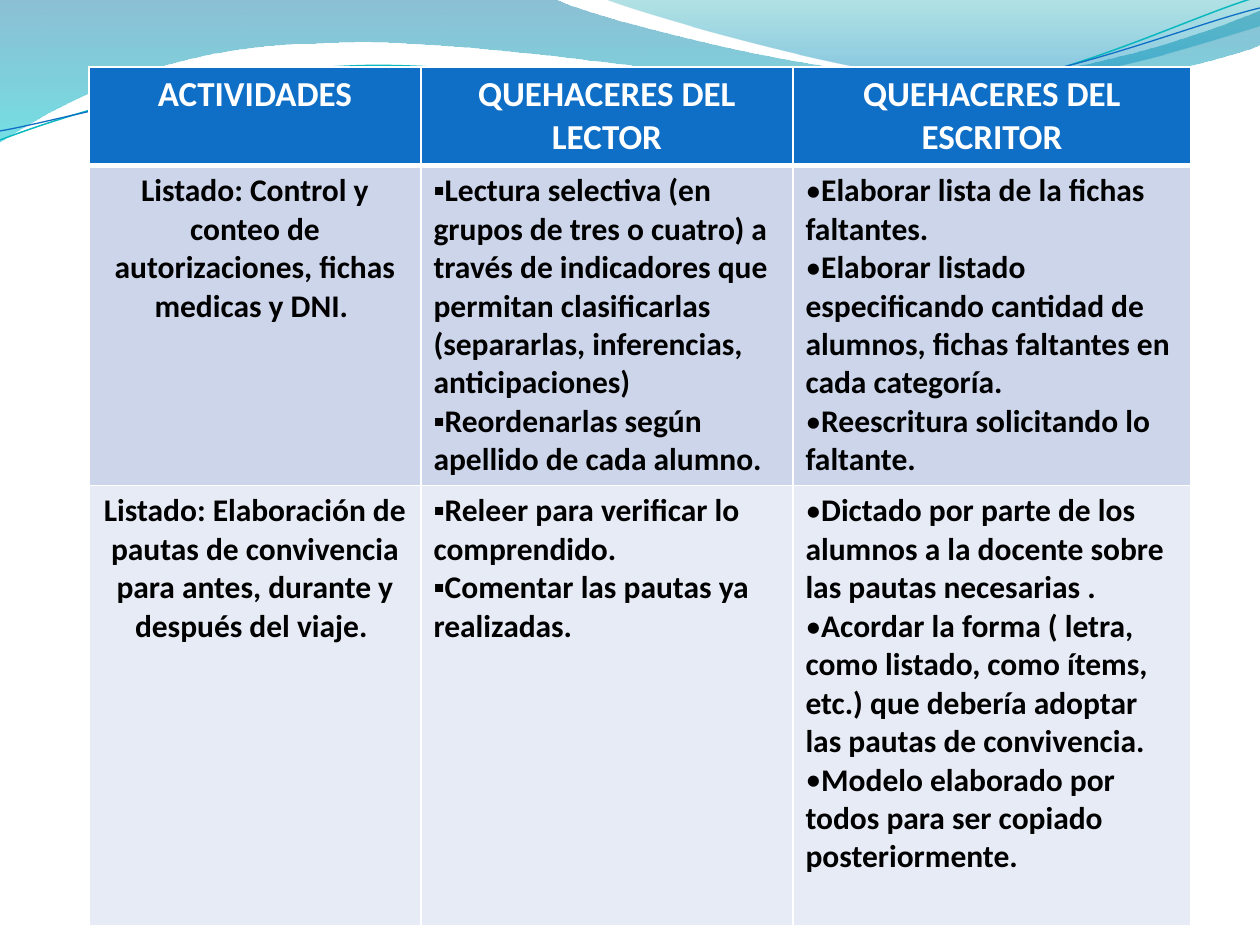
from lxml.etree import SubElement
from pptx import Presentation
from pptx.dml.color import RGBColor
from pptx.enum.text import PP_ALIGN
from pptx.oxml.ns import qn
from pptx.util import Pt

PX = 914400 / 126


def px(value):
    return round(value * PX)


def add_outline(slide, start, segments, closed):
    """Draw a path; a segment is an end point or two control points and an end point."""
    anchors = [start] + [segment[-1] for segment in segments]
    left = min(x for x, y in anchors)
    top = min(y for x, y in anchors)
    builder = slide.shapes.build_freeform(*start, scale=PX)
    builder.add_line_segments(anchors[1:], close=closed)
    shape = builder.convert_to_shape()
    shape.shadow.inherit = False
    for line, segment in zip(list(shape._element.iter(qn("a:lnTo"))), segments):
        if len(segment) == 3:
            curve = SubElement(line.getparent(), qn("a:cubicBezTo"))
            for x, y in segment:
                SubElement(curve, qn("a:pt"), x=str(x - left), y=str(y - top))
            line.getparent().replace(line, curve)
    return shape


deck = Presentation()
deck.slide_width, deck.slide_height = px(1260), px(945)
slide = deck.slides.add_slide(deck.slide_layouts[6])

# Translucent waves: start, segments, gradient stops (position, colour, opacity %)
waves = [
    ((0, -1),
     [[(554, -1)],
      [(600, 21), (837, 79), (955, 79)],
      [(1075, 79), (1207, 47), (1260, 11)],
      [(1261, 45)],
      [(1239, 55), (1096, 96), (940, 94)],
      [(783, 94), (481, 35), (324, 43)],
      [(163, 44), (58, 105), (-1, 142)]],
     [(0, "0074A1", 45), (1, "00C6CF", 55)]),
    ((604, -1),
     [[(641, 14), (859, 78), (969, 82)],
      [(1079, 87), (1211, 40), (1260, 26)],
      [(1260, 0)]],
     [(0, "00A1A9", 30), (0.8, "008BBF", 45)]),
]
# The first wave's upper edge rises to the right slightly below the second one
waves[0][1][2][1] = (1207, 33)
for start, segments, stops in waves:
    wave = add_outline(slide, start, segments, True)
    wave.line.fill.background()
    wave.fill.gradient()
    wave.fill.gradient_angle = 270
    for stop, (position, color, opacity) in zip(wave.fill.gradient_stops, stops):
        stop.position = position
        stop.color.rgb = RGBColor.from_string(color)
    for element, (_, _, opacity) in zip(wave._element.iter(qn("a:gs")), stops):
        SubElement(element[0], qn("a:alpha"), val=str(opacity * 1000))

strands = [
    ((0, 140),
     [[(60, 117), (199, 72), (349, 66)],
      [(498, 59), (747, 112), (898, 101)],
      [(1050, 89), (1182, 19), (1257, -3)]],
     "0AB8BF", 0.85),
    ((0, 131),
     [[(59, 121), (207, 77), (357, 71)],
      [(508, 64), (752, 105), (903, 95)],
      [(1053, 84), (1185, 26), (1260, 8)]],
     "0F6FC6", 0.75),
]
for start, segments, color, width in strands:
    strand = add_outline(slide, start, segments, False)
    strand.fill.background()
    strand.line.color.rgb = RGBColor.from_string(color)
    strand.line.width = Pt(width)

# Activities table
rows = [
    [["ACTIVIDADES"], ["QUEHACERES DEL LECTOR"], ["QUEHACERES DEL ESCRITOR"]],
    [["Listado: Control y conteo de autorizaciones, fichas medicas y DNI. "],
     ["Lectura selectiva (en grupos de tres o cuatro) a través de indicadores que "
      "permitan clasificarlas (separarlas, inferencias, anticipaciones)",
      "Reordenarlas según apellido de cada alumno."],
     ["Elaborar lista de la fichas faltantes.",
      "Elaborar listado especificando cantidad de alumnos, fichas faltantes en "
      "cada categoría.",
      "Reescritura solicitando lo faltante."]],
    [["Listado: Elaboración de pautas de convivencia para antes, durante y "
      "después del viaje. "],
     ["Releer para verificar lo comprendido.",
      "Comentar las pautas ya realizadas."],
     ["Dictado por parte de los alumnos a la docente sobre las pautas necesarias .",
      "Acordar la forma ( letra, como listado, como ítems, etc.) que debería "
      "adoptar las pautas de convivencia.",
      "Modelo elaborado por todos para ser copiado posteriormente."]],
]
column_widths = [332, 372, 398]
row_heights = [91, 297, 440]
row_fills = ["0F6FC6", "CCD5EA", "E7EBF5"]
bullets = [None, "▪", "•"]

table = slide.shapes.add_table(3, 3, px(89), px(67), px(sum(column_widths)),
                               px(sum(row_heights))).table
for column, width in zip(table.columns, column_widths):
    column.width = px(width)
for row, height in zip(table.rows, row_heights):
    row.height = px(height)

for row_index, texts in enumerate(rows):
    header = row_index == 0
    for column_index, paragraphs in enumerate(texts):
        cell = table.cell(row_index, column_index)
        properties = cell._tc.get_or_add_tcPr()
        thick_side = {0: "B", 1: "T"}.get(row_index)
        for side in "LRTB":
            border = SubElement(properties, qn("a:ln" + side),
                                w=str(Pt(3 if side == thick_side else 1)))
            SubElement(SubElement(border, qn("a:solidFill")), qn("a:srgbClr"), val="FFFFFF")
        cell.fill.solid()
        cell.fill.fore_color.rgb = RGBColor.from_string(row_fills[row_index])

        frame = cell.text_frame
        for index, text in enumerate(paragraphs):
            para = frame.add_paragraph() if index else frame.paragraphs[0]
            if header or column_index == 0:
                para.alignment = PP_ALIGN.CENTER
            else:
                layout = para._p.get_or_add_pPr()
                SubElement(layout, qn("a:buFont"), typeface="Calibri")
                SubElement(layout, qn("a:buChar"), char=bullets[column_index])
            span = para.add_run()
            span.text = text
            span.font.name = "Calibri"
            span.font.size = Pt(20 if header else 18)
            span.font.bold = True
            span.font.color.rgb = RGBColor.from_string("FFFFFF" if header else "000000")

deck.save("out.pptx")
